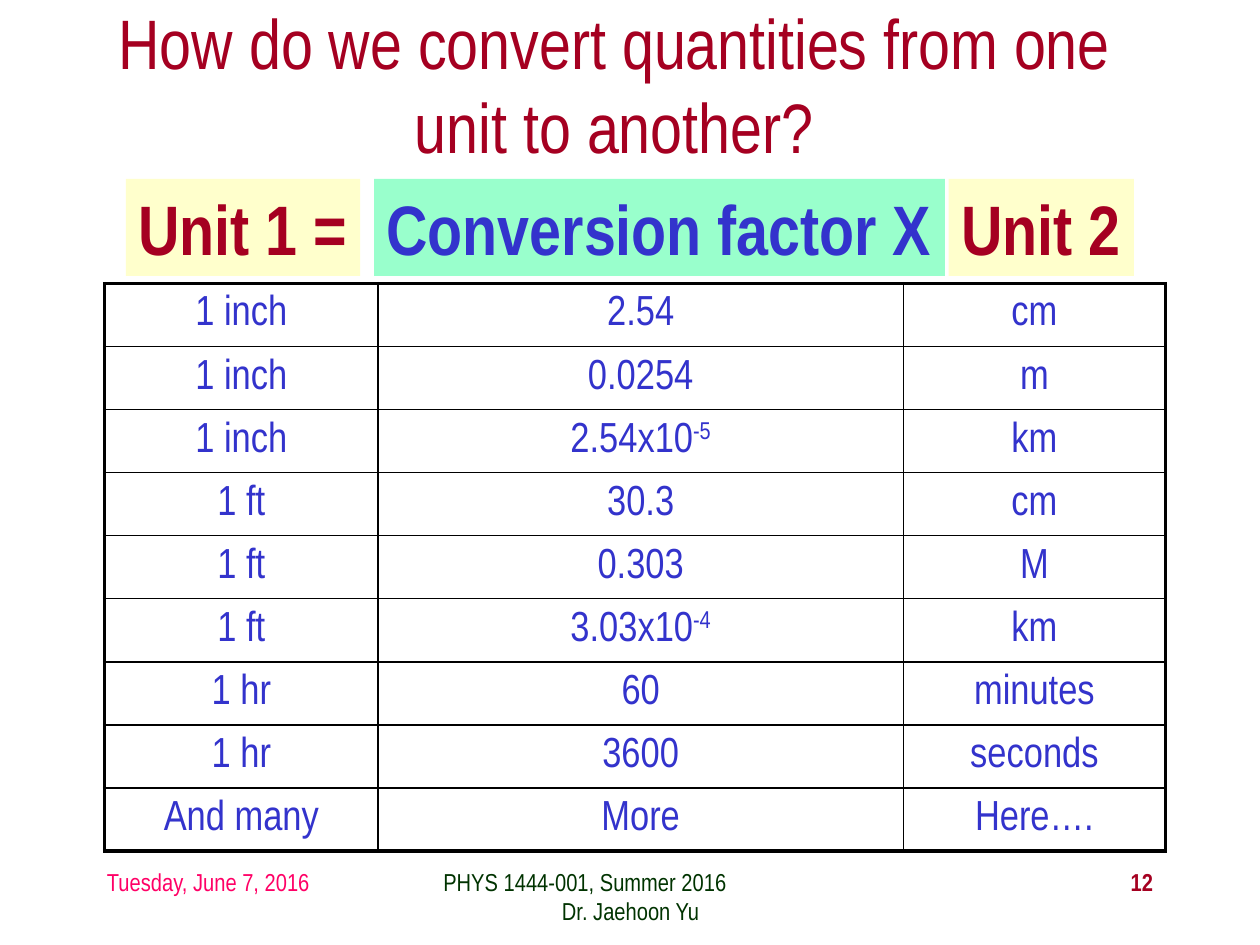
from dataclasses import dataclass

from pptx import Presentation
from pptx.dml.color import RGBColor
from pptx.enum.shapes import MSO_SHAPE
from pptx.enum.text import MSO_ANCHOR, MSO_AUTO_SIZE, PP_ALIGN
from pptx.oxml import parse_xml
from pptx.oxml.ns import nsdecls
from pptx.util import Inches, Pt


@dataclass(frozen=True)
class Theme:
    font: str = "Arial Narrow"
    red: str = "A50021"
    blue: str = "3333CC"
    pink: str = "FF0066"
    green: str = "003300"
    cream: str = "FFFFCC"
    mint: str = "99FFCC"
    line: str = "000000"
    heading: int = 40
    body: int = 24
    footer: int = 14
    outer_line: float = 2.25
    inner_line: float = 1


THEME = Theme()


def write(para, text, *, size, color, bold=False, align=PP_ALIGN.LEFT):
    """Fill a paragraph; text after ^ is superscript."""
    para.alignment = align
    for index, part in enumerate(text.split("^")):
        span = para.add_run()
        span.text = part
        span.font.name = THEME.font
        span.font.size = Pt(size)
        span.font.bold = bold
        span.font.color.rgb = RGBColor.from_string(color)
        if index:
            span.font._element.set("baseline", "30000")


class SlideBuilder:
    def __init__(self, page, theme):
        self.page = page
        self.theme = theme

    def title(self, text, left, top, width, height):
        box = self.page.shapes.title
        box.left, box.top = Inches(left), Inches(top)
        box.width, box.height = Inches(width), Inches(height)
        frame = box.text_frame
        frame.auto_size = MSO_AUTO_SIZE.NONE
        frame.vertical_anchor = MSO_ANCHOR.MIDDLE
        write(frame.paragraphs[0], text, size=self.theme.heading,
              color=self.theme.red, align=PP_ALIGN.CENTER)

    def label(self, text, left, width, fill, color):
        box = self.page.shapes.add_shape(
            MSO_SHAPE.RECTANGLE, Inches(left), Inches(1.42), Inches(width), Inches(0.77))
        box.shadow.inherit = False
        box.fill.solid()
        box.fill.fore_color.rgb = RGBColor.from_string(fill)
        box.line.fill.background()
        frame = box.text_frame
        frame.word_wrap = False
        frame.auto_size = MSO_AUTO_SIZE.SHAPE_TO_FIT_TEXT
        write(frame.paragraphs[0], text, size=self.theme.heading, color=color, bold=True)

    def footer(self, lines, left, width, color, bold=False):
        box = self.page.shapes.add_textbox(
            Inches(left), Inches(6.83), Inches(width), Inches(0.5))
        frame = box.text_frame
        frame.word_wrap = True
        for index, (text, align) in enumerate(lines):
            para = frame.add_paragraph() if index else frame.paragraphs[0]
            write(para, text, size=self.theme.footer, color=color, bold=bold, align=align)

    def border(self, cell, side, outer):
        width = Pt(self.theme.outer_line if outer else self.theme.inner_line)
        cell._tc.get_or_add_tcPr().append(parse_xml(
            f'<a:ln{side} {nsdecls("a")} w="{width}"><a:solidFill>'
            f'<a:srgbClr val="{self.theme.line}"/></a:solidFill></a:ln{side}>'))

    def table(self, rows, left, top, widths, row_height):
        table = self.page.shapes.add_table(
            len(rows), len(widths), Inches(left), Inches(top),
            Inches(sum(widths)), Inches(row_height * len(rows))).table
        table.first_row = table.horz_banding = False
        for column, width in zip(table.columns, widths):
            column.width = Inches(width)
        last_row, last_column = len(rows) - 1, len(widths) - 1
        for r, row in enumerate(rows):
            table.rows[r].height = Inches(row_height)
            for c, text in enumerate(row):
                cell = table.cell(r, c)
                cell.vertical_anchor = MSO_ANCHOR.MIDDLE
                write(cell.text_frame.paragraphs[0], text, size=self.theme.body,
                      color=self.theme.blue, align=PP_ALIGN.CENTER)
                # Heavy outer frame, thin inner grid
                self.border(cell, "L", c == 0)
                self.border(cell, "R", c == last_column)
                self.border(cell, "T", r == 0)
                self.border(cell, "B", r == last_row)
                cell.fill.background()


CONVERSIONS = [
    ("1 inch", "2.54", "cm"),
    ("1 inch", "0.0254", "m"),
    ("1 inch", "2.54x10^-5", "km"),
    ("1 ft", "30.3", "cm"),
    ("1 ft", "0.303", "M"),
    ("1 ft", "3.03x10^-4", "km"),
    ("1 hr", "60", "minutes"),
    ("1 hr", "3600", "seconds"),
    ("And many", "More", "Here…."),
]


def main():
    deck = Presentation()
    deck.slide_width, deck.slide_height = Inches(10), Inches(7.5)
    builder = SlideBuilder(deck.slides.add_slide(deck.slide_layouts[5]), THEME)

    # Footer: date, course and page number
    builder.footer([("Tuesday, June 7, 2016", PP_ALIGN.LEFT)], 0.75, 2.08, THEME.pink)
    builder.footer([("PHYS 1444-001, Summer 2016", PP_ALIGN.LEFT),
                    ("Dr. Jaehoon Yu", PP_ALIGN.CENTER)], 3.42, 3.17, THEME.green)
    builder.footer([("12", PP_ALIGN.RIGHT)], 7.17, 2.08, THEME.red, bold=True)

    # Title and the conversion formula
    builder.title("How do we convert quantities from one unit to another?", 0.75, 0, 8.25, 1.33)
    builder.label("Unit 1 =", 1, 1.86, THEME.cream, THEME.red)
    builder.label("Unit 2", 7.53, 1.47, THEME.cream, THEME.red)
    builder.label("Conversion factor X", 2.97, 4.53, THEME.mint, THEME.blue)

    # Conversion table
    builder.table(CONVERSIONS, 0.83, 2.25, (2.17, 4.17, 2.08), 0.5)
    deck.save("out.pptx")


if __name__ == "__main__":
    main()
